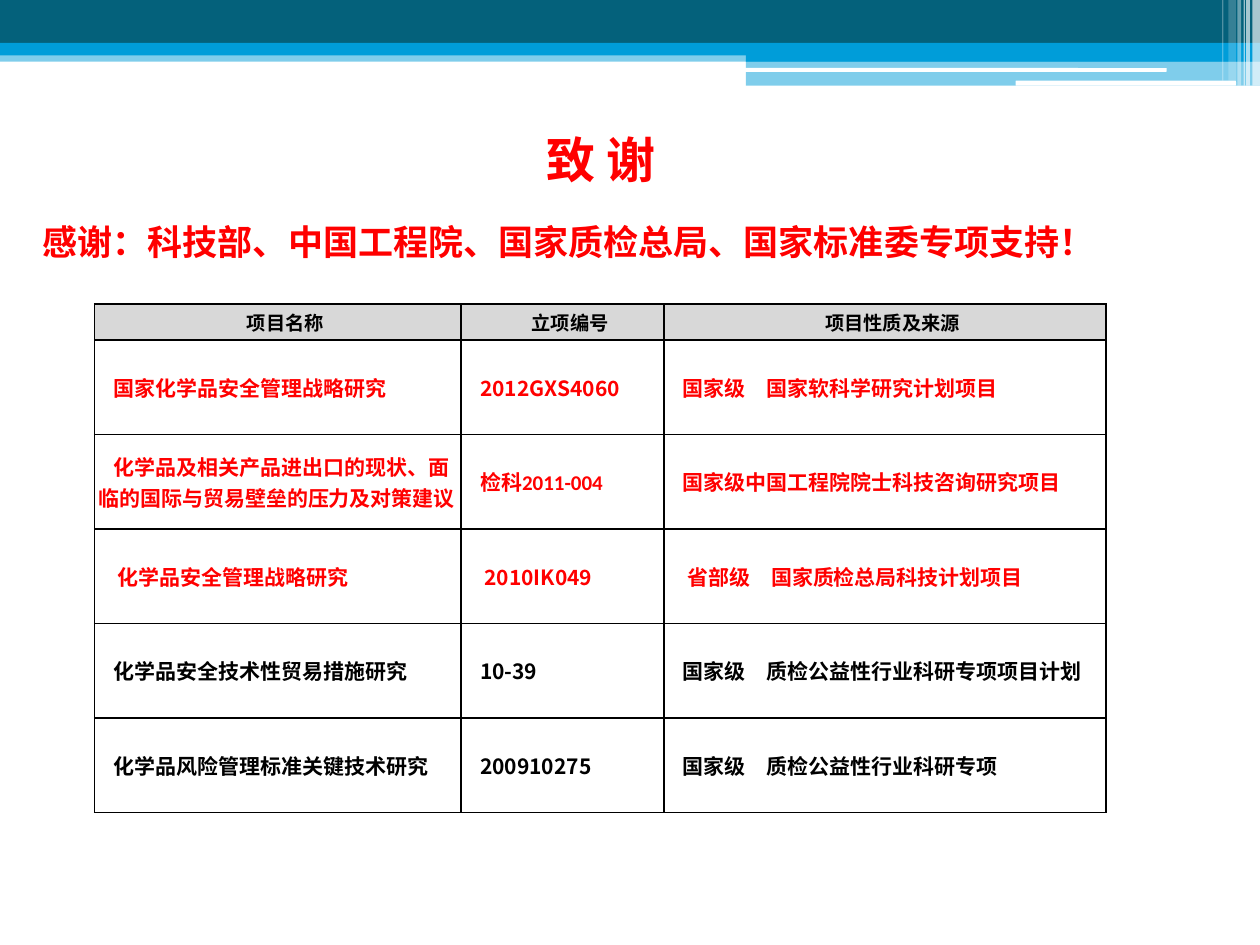
import pptx
import pptx.util
import pptx.dml.color
import pptx.enum.shapes
import pptx.enum.text
import pptx.oxml
import pptx.oxml.ns

Pt = pptx.util.Pt
RGBColor = pptx.dml.color.RGBColor
SHAPE = pptx.enum.shapes.MSO_SHAPE
ALIGN = pptx.enum.text.PP_ALIGN
ANCHOR = pptx.enum.text.MSO_ANCHOR
qn = pptx.oxml.ns.qn

TEAL = RGBColor(0x04, 0x61, 0x7B)
BLUE = RGBColor(0x00, 0x9D, 0xD9)
WHITE = RGBColor(0xFF, 0xFF, 0xFF)
BLACK = RGBColor(0x00, 0x00, 0x00)
RED = RGBColor(0xFF, 0x00, 0x00)
GREY = RGBColor(0xD8, 0xD8, 0xD8)

CJK = "Noto Sans CJK SC"
LATIN = "Calibri"

BANDS = [
    (0, 28.8, 720, 6.48, BLUE, 50),
    (0, 0, 720, 24.48, TEAL, 100),
    (0, 24.48, 720, 7.2, BLUE, 100),
    (426.24, 28.08, 293.76, 7.2, BLUE, 100),
    (426.24, 34.56, 293.76, 14.4, BLUE, 50),
]
HIGHLIGHTS = [(425.52, 38.88, 241.2, 2.16), (580.32, 46.08, 126, 2.88)]
STRIPES = [
    (715.68, 4.32, 48.96, 65),
    (712.08, 2.16, 48.96, 65),
    (710.64, 0.72, 48.96, 60),
    (707.04, 2.16, 48.96, 40),
    (702, 4.32, 46.08, 20),
    (698.4, 0.72, 46.08, 30),
]

HEADERS = ["项目名称", "立项编号", "项目性质及来源"]
PROJECTS = [
    ("国家化学品安全管理战略研究", "2012GXS4060", "国家级　国家软科学研究计划项目", RED, 2.16),
    ("化学品及相关产品进出口的现状、面临的国际与贸易壁垒的压力及对策建议",
     "检科2011-004", "国家级中国工程院院士科技咨询研究项目", RED, 2.16),
    ("化学品安全管理战略研究", "2010IK049", "省部级　国家质检总局科技计划项目", RED, 4.6),
    ("化学品安全技术性贸易措施研究", "10-39", "国家级　质检公益性行业科研专项项目计划", BLACK, 2.16),
    ("化学品风险管理标准关键技术研究", "200910275", "国家级　质检公益性行业科研专项", BLACK, 2.16),
]
COLUMN_WIDTHS = [209.52, 115.92, 252.72]
HEADER_HEIGHT = 20.7
ROW_HEIGHT = 54


def format_paragraph(p, size, font, color, align=ALIGN.LEFT, margin=0, indent=0):
    p.alignment = align
    pPr = p._p.get_or_add_pPr()
    pPr.set("marL", str(Pt(margin)))
    pPr.set("indent", str(Pt(indent)))
    for r in p.runs:
        r.font.size = Pt(size)
        r.font.bold = True
        r.font.color.rgb = color
        r.font.name = font
        ea = pptx.oxml.parse_xml(f'<a:ea {pptx.oxml.ns.nsdecls("a")} typeface="{CJK}"/>')
        r._r.get_or_add_rPr().append(ea)


def add_block(s, kind, left, top, width, height, color, opacity=100):
    sp = s.shapes.add_shape(kind, Pt(left), Pt(top), Pt(width), Pt(height))
    sp.shadow.inherit = False
    sp.line.fill.background()
    sp.fill.solid()
    sp.fill.fore_color.rgb = color
    if opacity < 100:
        clr = sp._element.spPr.find(".//" + qn("a:srgbClr"))
        clr.append(pptx.oxml.parse_xml(
            f'<a:alpha {pptx.oxml.ns.nsdecls("a")} val="{opacity * 1000}"/>'))


def add_banner(s, left, top):
    for x, y, width, height, color, opacity in BANDS:
        add_block(s, SHAPE.RECTANGLE, left + x, top + y, width, height, color, opacity)
    for x, y, width, height in HIGHLIGHTS:
        add_block(s, SHAPE.ROUNDED_RECTANGLE, left + x, top + y, width, height, WHITE)
    for x, width, height, opacity in STRIPES:
        add_block(s, SHAPE.RECTANGLE, left + x, top, width, height, WHITE, opacity)


def add_title(s, left, top, width, height):
    sp = s.shapes.title
    sp.left, sp.top, sp.width, sp.height = Pt(left), Pt(top), Pt(width), Pt(height)
    tf = sp.text_frame
    tf.text = "致 谢"
    tf.vertical_anchor = ANCHOR.MIDDLE
    format_paragraph(tf.paragraphs[0], 28, "Lato", RED, ALIGN.CENTER)


def add_thanks(s, left, top, width, height):
    sp = s.shapes.add_textbox(Pt(left), Pt(top), Pt(width), Pt(height))
    tf = sp.text_frame
    tf.word_wrap = True
    tf.text = "感谢：科技部、中国工程院、国家质检总局、国家标准委专项支持！"
    p = tf.paragraphs[0]
    p.space_before = Pt(3)
    format_paragraph(p, 20, CJK, RED, margin=8.64)


def add_borders(cell):
    tcPr = cell._tc.get_or_add_tcPr()
    for side in ("lnL", "lnR", "lnT", "lnB"):
        tcPr.append(pptx.oxml.parse_xml(
            f'<a:{side} {pptx.oxml.ns.nsdecls("a")} w="{Pt(1)}">'
            f'<a:solidFill><a:srgbClr val="{BLACK}"/></a:solidFill></a:{side}>'))


def fill_cell(cell, text, size, font, color, align, inset, fill):
    add_borders(cell)
    if fill is None:
        cell.fill.background()
    else:
        cell.fill.solid()
        cell.fill.fore_color.rgb = fill
    cell.margin_left = cell.margin_right = Pt(inset)
    cell.margin_top = cell.margin_bottom = Pt(0)
    cell.vertical_anchor = ANCHOR.MIDDLE
    cell.text_frame.text = text
    format_paragraph(cell.text_frame.paragraphs[0], size, font, color, align, indent=8.64)


def add_projects(s, left, top, width, height):
    frame = s.shapes.add_table(len(PROJECTS) + 1, len(HEADERS),
                               Pt(left), Pt(top), Pt(width), Pt(height))
    table = frame.table
    table.first_row = table.horz_banding = False
    for column, column_width in zip(table.columns, COLUMN_WIDTHS):
        column.width = Pt(column_width)
    for i, row in enumerate(table.rows):
        row.height = Pt(ROW_HEIGHT if i else HEADER_HEIGHT)
    for j, text in enumerate(HEADERS):
        fill_cell(table.cell(0, j), text, 11, LATIN, BLACK, ALIGN.CENTER, 2.16, GREY)
    for i, (name, number, origin, color, inset) in enumerate(PROJECTS, 1):
        number_font = LATIN if number.startswith("检科") else CJK
        cells = [(name, LATIN), (number, number_font), (origin, LATIN)]
        for j, (text, font) in enumerate(cells):
            fill_cell(table.cell(i, j), text, 12, font, color, ALIGN.LEFT, inset, None)


def main():
    prs = pptx.Presentation()
    prs.slide_width, prs.slide_height = Pt(720), Pt(540)
    s = prs.slides.add_slide(prs.slide_layouts[5])
    add_banner(s, 0, 0)
    add_title(s, 19.44, 48.96, 648, 84.24)
    add_thanks(s, 8.64, 122.4, 680.4, 380.16)
    add_projects(s, 54, 173.6, sum(COLUMN_WIDTHS), HEADER_HEIGHT + ROW_HEIGHT * len(PROJECTS))
    prs.save("out.pptx")


if __name__ == "__main__":
    main()
